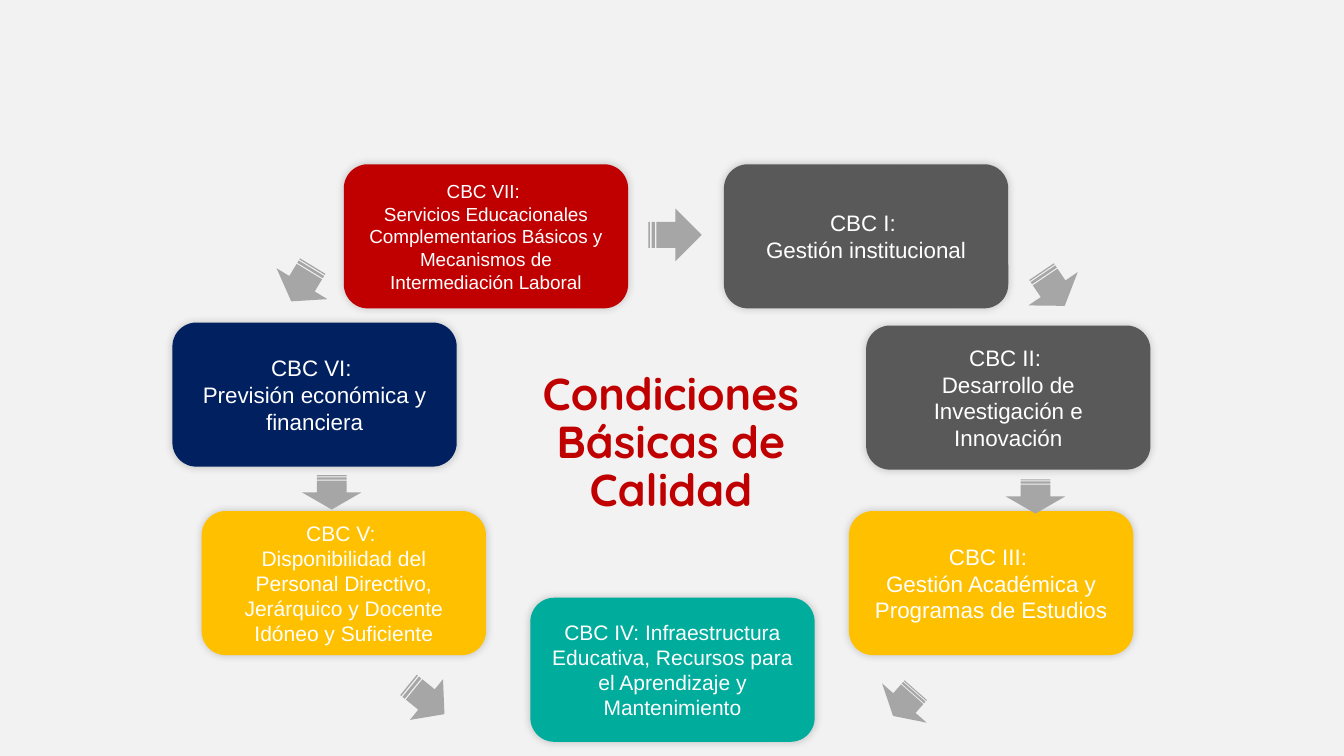
from lxml.etree import SubElement
from pptx import Presentation
from pptx.dml.color import RGBColor
from pptx.enum.shapes import MSO_SHAPE
from pptx.enum.text import MSO_ANCHOR, PP_ALIGN
from pptx.oxml.ns import qn
from pptx.util import Inches, Pt

COLORS = {
    "background": "F2F2F2",
    "navy": "002060",
    "red": "C00000",
    "gray": "595959",
    "amber": "FFC000",
    "teal": "00AC9C",
    "arrow": "A6A6A6",
    "white": "FFFFFF",
    "shadow": "000000",
}
CARD_WIDTH, CARD_HEIGHT = 2.82, 1.43

# left, top, color, text size, paragraphs
CARDS = [
    (1.71, 3.2, "navy", 16, ["CBC VI: ", "Previsión económica y financiera"]),
    (3.41, 1.63, "red", 13.5, [
        "CBC VII: ",
        "Servicios Educacionales Complementarios Básicos y "
        "Mecanismos de Intermediación Laboral"]),
    (7.18, 1.63, "gray", 16, ["CBC I: ", "Gestión institucional"]),
    (8.59, 3.23, "gray", 16, [
        "CBC II: ", "Desarrollo de Investigación e Innovación"]),
    (2, 5.07, "amber", 15, [
        "CBC V: ",
        "Disponibilidad del Personal Directivo, Jerárquico y Docente "
        "Idóneo y Suficiente"]),
    (5.26, 5.93, "teal", 15, [
        "CBC IV: Infraestructura Educativa, Recursos para el Aprendizaje "
        "y Mantenimiento"]),
    (8.42, 5.07, "amber", 16, [
        "CBC III: ", "Gestión Académica y Programas de Estudios"]),
]

# left, top, width, height, rotation
ARROWS = [
    (6.43, 2.07, 0.53, 0.52, 0),
    (2.79, 2.52, 0.41, 0.59, 121.3),
    (4, 6.68, 0.46, 0.52, 39.1),
    (10.24, 2.57, 0.41, 0.59, 55.9),
    (3.12, 4.59, 0.34, 0.59, 90),
    (8.8, 6.68, 0.34, 0.59, 131.4),
    (10.1, 4.63, 0.34, 0.59, 90),
]


class SlideBuilder:
    def __init__(self, slide):
        self.slide = slide
        background = slide.background.fill
        background.solid()
        background.fore_color.rgb = self.color("background")

    def color(self, name):
        return RGBColor.from_string(COLORS[name])

    def add_text(self, shape, paragraphs, color, font_format, line_spacing=1.0):
        frame = shape.text_frame
        frame.word_wrap = True
        frame.vertical_anchor = MSO_ANCHOR.MIDDLE
        for index, text in enumerate(paragraphs):
            paragraph = frame.add_paragraph() if index else frame.paragraphs[0]
            paragraph.alignment = PP_ALIGN.CENTER
            paragraph.line_spacing = line_spacing
            run = paragraph.add_run()
            run.text = text
            run.font.color.rgb = self.color(color)
            for name, value in font_format.items():
                setattr(run.font, name, value)

    def title(self, text, left, top, width, height):
        box = self.slide.shapes.add_textbox(
            Inches(left), Inches(top), Inches(width), Inches(height))
        font_format = {"name": "Quicksand", "size": Pt(32), "bold": True}
        self.add_text(box, [text], "red", font_format, line_spacing=0.9)

    def filled_shape(self, kind, left, top, width, height, color):
        shape = self.slide.shapes.add_shape(
            kind, Inches(left), Inches(top), Inches(width), Inches(height))
        shape.shadow.inherit = False
        shape.fill.solid()
        shape.fill.fore_color.rgb = self.color(color)
        shape.line.fill.background()
        return shape

    def soft_shadow(self, shape):
        effects = shape.element.spPr.find(qn("a:effectLst"))
        shadow = SubElement(effects, qn("a:outerShdw"), blurRad=str(Pt(6)),
                            dist="0", dir=str(225 * 60000), rotWithShape="0")
        tint = SubElement(shadow, qn("a:srgbClr"), val=COLORS["shadow"])
        SubElement(tint, qn("a:alpha"), val="20000")

    def card(self, left, top, color, size, paragraphs):
        card = self.filled_shape(MSO_SHAPE.ROUNDED_RECTANGLE, left, top,
                                 CARD_WIDTH, CARD_HEIGHT, color)
        self.soft_shadow(card)
        font_format = {"name": "Arial", "size": Pt(size)}
        self.add_text(card, paragraphs, "white", font_format)

    def arrow(self, left, top, width, height, rotation):
        arrow = self.filled_shape(MSO_SHAPE.STRIPED_RIGHT_ARROW, left, top,
                                  width, height, "arrow")
        arrow.rotation = rotation


def main():
    presentation = Presentation()
    presentation.slide_width = Inches(13.33)
    presentation.slide_height = Inches(7.5)
    builder = SlideBuilder(
        presentation.slides.add_slide(presentation.slide_layouts[6]))
    builder.title("Condiciones Básicas de Calidad", 5.14, 3.5, 3.03, 1.81)
    for card in CARDS:
        builder.card(*card)
    for arrow in ARROWS:
        builder.arrow(*arrow)
    presentation.save("out.pptx")


if __name__ == "__main__":
    main()
